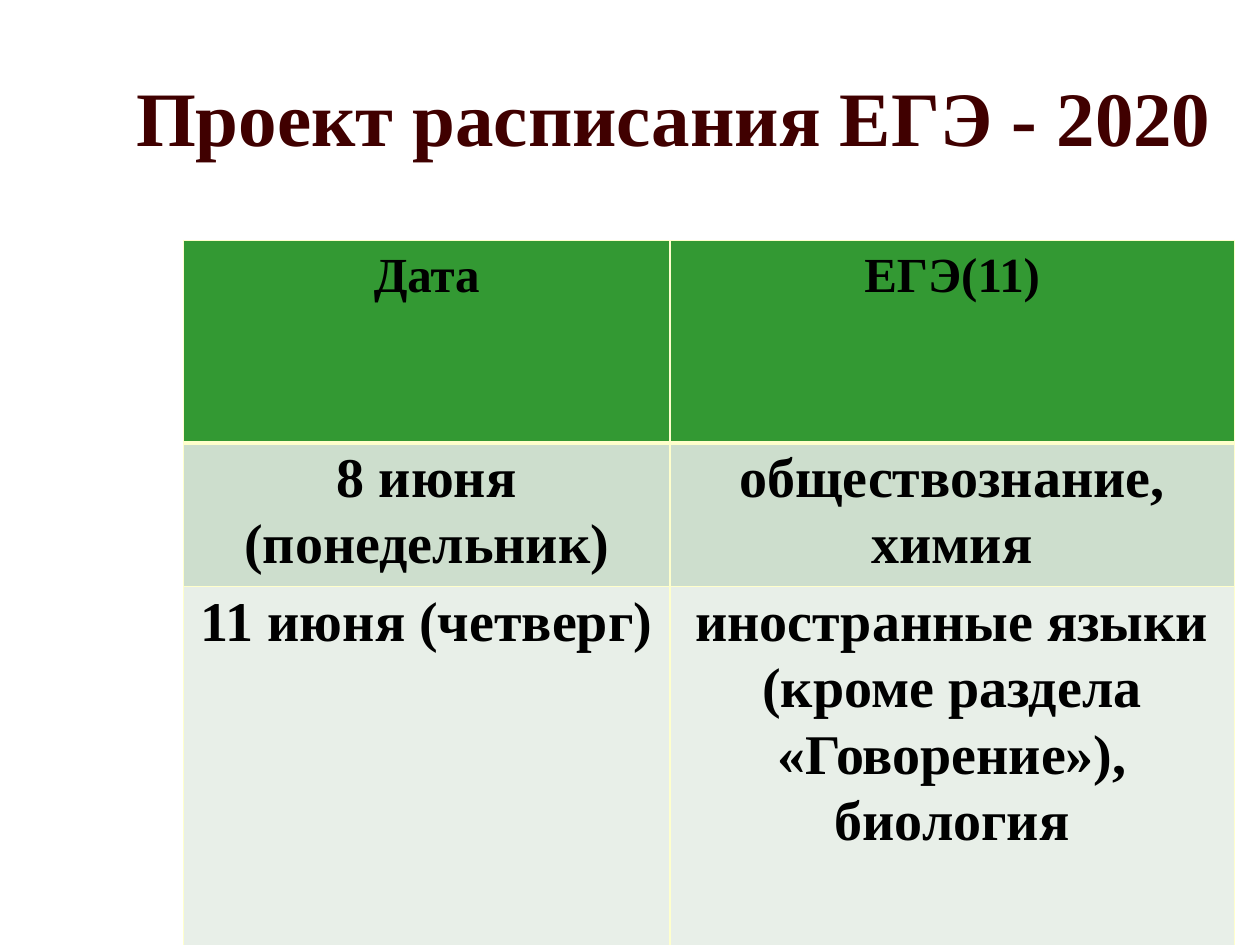
"""Build a slide with the draft timetable of the 2020 state exams."""
import lxml.etree
import pptx
import pptx.dml.color
import pptx.enum.text
import pptx.oxml.ns
import pptx.util

Pt = pptx.util.Pt
RGBColor = pptx.dml.color.RGBColor
PP_ALIGN = pptx.enum.text.PP_ALIGN
MSO_ANCHOR = pptx.enum.text.MSO_ANCHOR
qn = pptx.oxml.ns.qn

COLORS = {
    "white": "FFFFFF",
    "title": "400000",
    "text": "000000",
    "border": "FFFFCC",
    "header": "339933",
    "odd": "CDDECD",
    "even": "E8EFE8",
}
FONT = "Times New Roman"


def format_paragraph(paragraph, size, color, alignment):
    paragraph.alignment = alignment
    paragraph.font.name = FONT
    paragraph.font.size = Pt(size)
    paragraph.font.bold = True
    paragraph.font.color.rgb = RGBColor.from_string(COLORS[color])


def add_border(cell, side, width):
    properties = cell._tc.get_or_add_tcPr()
    line = lxml.etree.SubElement(properties, qn(f"a:ln{side}"), w=str(Pt(width)))
    fill = lxml.etree.SubElement(line, qn("a:solidFill"))
    lxml.etree.SubElement(fill, qn("a:srgbClr"), val=COLORS["border"])


presentation = pptx.Presentation()
presentation.slide_width = Pt(720)
presentation.slide_height = Pt(540)
slide = presentation.slides.add_slide(presentation.slide_layouts[5])

title = slide.shapes.title
title.left, title.top, title.width, title.height = Pt(25.2), Pt(21.6), Pt(674.6), Pt(89.3)
title.fill.solid()
title.fill.fore_color.rgb = RGBColor.from_string(COLORS["white"])
title.line.color.rgb = RGBColor.from_string(COLORS["white"])
title.line.width = Pt(1.5)
title.text_frame.text = "Проект расписания ЕГЭ - 2020"
title.text_frame.vertical_anchor = MSO_ANCHOR.MIDDLE
format_paragraph(title.text_frame.paragraphs[0], 44, "title", PP_ALIGN.RIGHT)

column_widths = [277.8, 322.6]
rows = [
    (115.9, "header", 28, 1.15, ["Дата", "ЕГЭ(11)"]),
    (82.1, "odd", 32, 1.07, ["8 июня (понедельник)", "обществознание, химия"]),
    (210.2, "even", 32, 1.07,
     ["11 июня (четверг)", "иностранные языки (кроме раздела «Говорение»), биология"]),
]
table_height = sum(row[0] for row in rows)
table = slide.shapes.add_table(
    len(rows), len(column_widths), Pt(105), Pt(137.3), Pt(sum(column_widths)), Pt(table_height)
).table
for column, width in zip(table.columns, column_widths):
    column.width = Pt(width)

for row_index, (height, fill, size, spacing, texts) in enumerate(rows):
    table.rows[row_index].height = Pt(height)
    top_width = 3 if row_index == 1 else 1
    bottom_width = 3 if row_index == 0 else 1
    for column_index, text in enumerate(texts):
        cell = table.cell(row_index, column_index)
        cell.text = text
        cell.margin_left = cell.margin_right = Pt(5)
        cell.margin_top = cell.margin_bottom = Pt(0)
        for side, width in (("L", 1), ("R", 1), ("T", top_width), ("B", bottom_width)):
            add_border(cell, side, width)
        cell.fill.solid()
        cell.fill.fore_color.rgb = RGBColor.from_string(COLORS[fill])
        paragraph = cell.text_frame.paragraphs[0]
        paragraph.line_spacing = spacing
        format_paragraph(paragraph, size, "text", PP_ALIGN.CENTER)

presentation.save("out.pptx")
